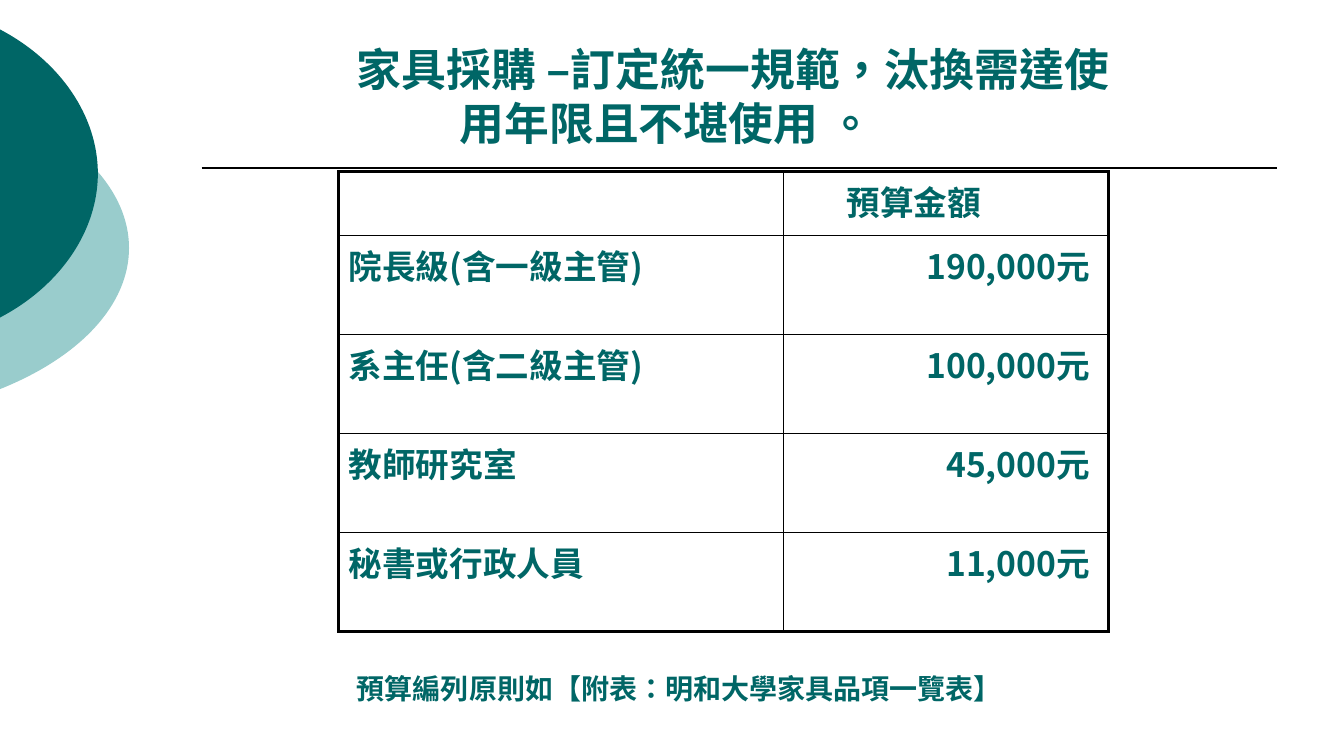
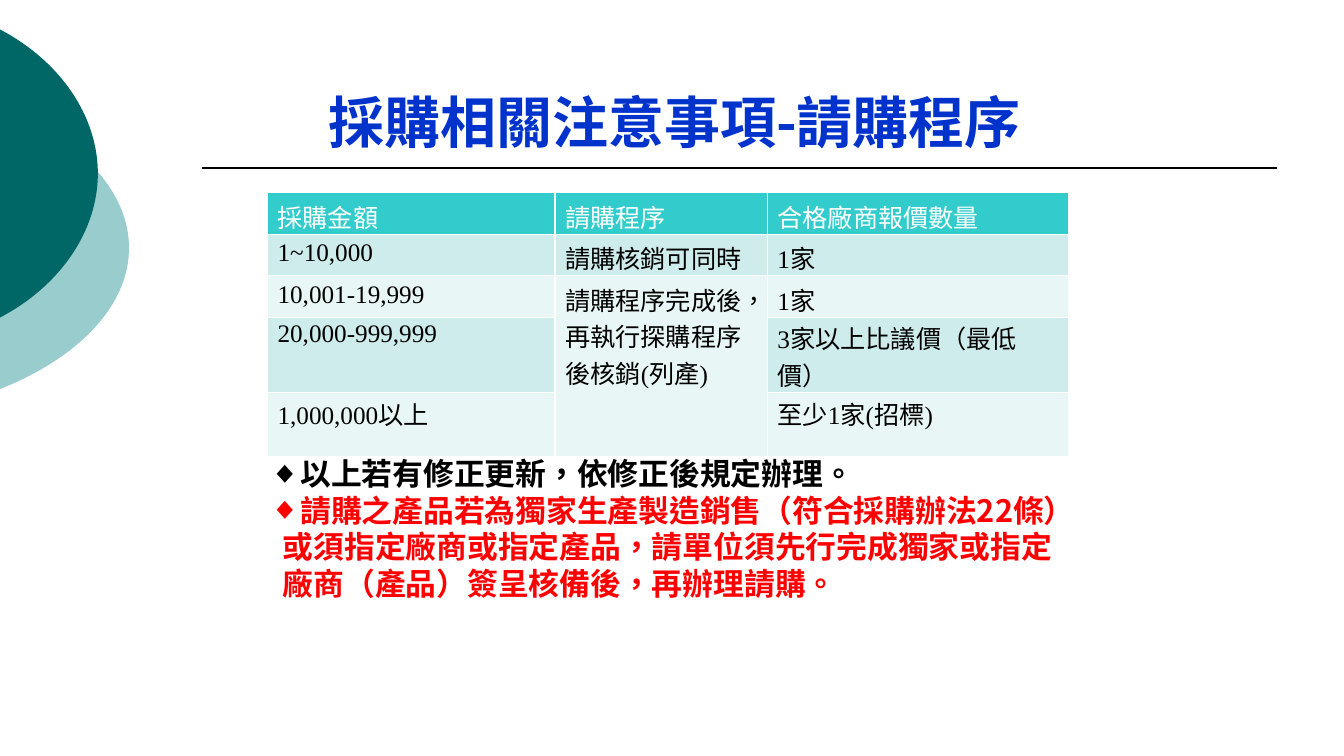
"""Build two slides on furniture budgets and the purchase request procedure."""
from dataclasses import dataclass

from lxml import etree
from pptx import Presentation
from pptx.dml.color import RGBColor
from pptx.enum.lang import MSO_LANGUAGE_ID
from pptx.enum.shapes import MSO_CONNECTOR
from pptx.enum.text import MSO_ANCHOR, MSO_AUTO_SIZE, PP_ALIGN
from pptx.oxml.ns import qn
from pptx.util import Inches, Pt

STRAIGHT = MSO_CONNECTOR.STRAIGHT
BOTTOM, TOP = MSO_ANCHOR.BOTTOM, MSO_ANCHOR.TOP
NO_FIT = MSO_AUTO_SIZE.NONE
LEFT, RIGHT = PP_ALIGN.LEFT, PP_ALIGN.RIGHT
CHINESE = MSO_LANGUAGE_ID.TAIWAN if hasattr(MSO_LANGUAGE_ID, "TAIWAN") else MSO_LANGUAGE_ID.TRADITIONAL_CHINESE


@dataclass(frozen=True)
class Theme:
    teal: str = "006666"
    mist: str = "99CCCC"
    blue: str = "0033CC"
    red: str = "FF0000"
    black: str = "000000"
    white: str = "FFFFFF"
    header: str = "33CCCC"
    bands: tuple = ("E8F6F6", "CEECEC")
    sans: str = "Noto Sans CJK JP"
    serif: str = "Times New Roman"
    dash: str = "Arial"
    heading: int = 40
    long_heading: int = 32
    budget: int = 24
    notice: int = 22
    footnote: int = 20
    procedure: int = 18


THEME = Theme()
WIDTH, HEIGHT = Inches(13.33), Inches(7.5)
COLUMN, ROW = WIDTH / 100, HEIGHT / 100


def write(para, text, size, color, bold=True, latin=THEME.sans):
    """Add one formatted run to a paragraph."""
    span = para.add_run()
    span.text = text
    span.font.size = Pt(size)
    span.font.bold = bold
    span.font.name = latin
    span.font.language_id = CHINESE
    span.font.color.rgb = RGBColor.from_string(color)
    east_asian = etree.SubElement(span.font._element, qn("a:ea"))
    east_asian.set("typeface", THEME.sans)


def add_grid(page, left, top, columns, rows, color, weight):
    """Add a plain table whose cell borders follow the weight rule."""
    frame = page.shapes.add_table(
        len(rows), len(columns), int(left * COLUMN), int(top * ROW),
        int(sum(columns) * COLUMN), int(sum(rows) * ROW))
    table = frame.table
    table.first_row = table.horz_banding = False
    for column, width in zip(table.columns, columns):
        column.width = int(width * COLUMN)
    for row, height in zip(table.rows, rows):
        row.height = int(height * ROW)
    for r in range(len(rows)):
        for c in range(len(columns)):
            cell = table.cell(r, c)
            cell.fill.background()
            properties = cell._tc.get_or_add_tcPr()
            for place, side in enumerate("LRTB"):
                line = etree.Element(qn(f"a:ln{side}"), w=str(Pt(weight(r, c, side))))
                fill = etree.SubElement(line, qn("a:solidFill"))
                etree.SubElement(fill, qn("a:srgbClr"), val=color)
                properties.insert(place, line)
    return table


deck = Presentation()
deck.slide_width, deck.slide_height = WIDTH, HEIGHT
layout = deck.slide_layouts[1]
budget_page = deck.slides.add_slide(layout)
request_page = deck.slides.add_slide(layout)

lobes = [
    (THEME.mist, (-35.4, 10, 45, 45.6), 9.6, 6, 32.8, 18.67, 14.4, 7.47),
    (THEME.teal, (-26.55, 0, 33.83, 46), 7.28, 4.55, 22.95, 19.05, 14.8, 7.5),
]
decorations = []
for color, (left, top, width, height), tip, bend, middle, half, upper, lower in lobes:
    builder = budget_page.shapes.build_freeform(0, 0)
    builder.add_line_segments([(int(width * COLUMN), int(height * ROW))])
    lobe = builder.convert_to_shape(int(left * COLUMN), int(top * ROW))
    outline = lobe.element.xpath(".//a:path")[0]
    for part in list(outline):
        outline.remove(part)
    strokes = [
        ("moveTo", [(0, -half)]),
        ("cubicBezTo", [(bend, -upper), (tip, -lower), (tip, 0)]),
        ("cubicBezTo", [(tip, lower), (bend, upper), (0, half)]),
        ("close", []),
    ]
    for kind, points in strokes:
        stroke = etree.SubElement(outline, qn(f"a:{kind}"))
        for x, y in points:
            etree.SubElement(stroke, qn("a:pt"), x=str(int((x - left) * COLUMN)),
                             y=str(int((middle + y - top) * ROW)))
    lobe.shadow.inherit = False
    lobe.fill.solid()
    lobe.fill.fore_color.rgb = RGBColor.from_string(color)
    lobe.line.fill.background()
    decorations.append(lobe)

rule_y = int(22.22 * ROW)
rule = budget_page.shapes.add_connector(
    STRAIGHT, int(15 * COLUMN), rule_y, int(95 * COLUMN), rule_y)
rule.line.width = Pt(1)
rule.line.color.rgb = RGBColor.from_string(THEME.black)
etree.SubElement(rule._element.spPr, qn("a:effectLst"))
decorations.append(rule)
for number, shape in enumerate(decorations):
    shape.element.xpath(".//p:cNvPr")[0].set("id", str(101 + number))
    layout.shapes.element.insert(2 + number, shape.element)

frames = [
    (budget_page.shapes.title, 25.8, 13.2, 59.6, 7.3, BOTTOM),
    (budget_page.placeholders[1], 25.8, 88.1, 55.5, 5.7, TOP),
    (request_page.shapes.title, 23.7, 4.4, 60, 16.7, BOTTOM),
    (request_page.placeholders[1], 19.3, 59.6, 63.2, 21, TOP),
]
for box, left, top, width, height, anchor in frames:
    box.left, box.top = int(left * COLUMN), int(top * ROW)
    box.width, box.height = int(width * COLUMN), int(height * ROW)
    box.text_frame.auto_size = NO_FIT
    box.text_frame.word_wrap = True
    box.text_frame.vertical_anchor = anchor

title_lines = [
    (0, [("家具採購 ", THEME.sans), ("–", THEME.dash), ("訂定統一規範，汰換需達使", THEME.sans)]),
    (7.65, [("用年限且不堪使用 。", THEME.sans)]),
]
title = budget_page.shapes.title.text_frame
for number, (indent, spans) in enumerate(title_lines):
    para = title.add_paragraph() if number else title.paragraphs[0]
    para.alignment = LEFT
    para.line_spacing = Pt(39)
    para._p.get_or_add_pPr().set("marL", str(int(indent * COLUMN)))
    for text, latin in spans:
        write(para, text, THEME.long_heading, THEME.teal, latin=latin)

para = request_page.shapes.title.text_frame.paragraphs[0]
para.alignment = LEFT
write(para, "採購相關注意事項-請購程序", THEME.heading, THEME.blue)

notes = [
    (budget_page, THEME.footnote, None, [
        ("預算編列原則如【附表：明和大學家具品項一覽表】", THEME.teal, 0, 0)]),
    (request_page, THEME.notice, Pt(26), [
        ("以上若有修正更新，依修正後規定辦理。", THEME.black, 2.3, -2.3),
        ("請購之產品若為獨家生產製造銷售（符合採購辦法22條）", THEME.red, 2.3, -2.3),
        ("或須指定廠商或指定產品，請單位須先行完成獨家或指定", THEME.red, 1, 0),
        ("廠商（產品）簽呈核備後，再辦理請購。", THEME.red, 1, 0)]),
]
for page, size, spacing, lines in notes:
    body = page.placeholders[1].text_frame
    for number, (text, color, margin, indent) in enumerate(lines):
        para = body.add_paragraph() if number else body.paragraphs[0]
        para.space_before = Pt(0)
        para.line_spacing = spacing
        properties = para._p.get_or_add_pPr()
        properties.set("marL", str(int(margin * COLUMN)))
        properties.set("indent", str(int(indent * COLUMN)))
        if indent:
            etree.SubElement(properties, qn("a:buFont"), typeface=THEME.dash)
            etree.SubElement(properties, qn("a:buChar"), char="◆")
        else:
            etree.SubElement(properties, qn("a:buNone"))
        write(para, text, size, color)

budgets = [
    ("", "預算金額"),
    ("院長級(含一級主管)", "190,000元"),
    ("系主任(含二級主管)", "100,000元"),
    ("教師研究室", "45,000元"),
    ("秘書或行政人員", "11,000元"),
]
outer_edges = {("L", 0), ("R", 1)}
outer_rows = {("T", 0), ("B", len(budgets) - 1)}
table = add_grid(
    budget_page, 25.2, 22.67, [33.1, 24.2], [8.5] + [13.1] * 4, THEME.black,
    lambda r, c, side: 2.25 if (side, c) in outer_edges or (side, r) in outer_rows else 1)
for r, texts in enumerate(budgets):
    for c, text in enumerate(texts):
        if not text:
            continue
        cell = table.cell(r, c)
        para = cell.text_frame.paragraphs[0]
        if c and r:
            para.alignment = RIGHT
            cell.margin_right = int(1.4 * COLUMN)
        elif c:
            cell.margin_left = int(4.7 * COLUMN)
        write(para, text, THEME.budget, THEME.teal)

procedures = [
    ("採購金額", "請購程序", "合格廠商報價數量"),
    ("1~10,000", "請購核銷可同時", "1家"),
    ("10,001-19,999", "請購程序完成後，再執行探購程序後核銷(列產)", "1家"),
    ("20,000-999,999", "", "3家以上比議價（最低價）"),
    ("1,000,000以上", "", "至少1家(招標)"),
]
table = add_grid(
    request_page, 19.9, 25.5, [21.4, 15.8, 22.4], [5.3, 5.5, 5.5, 9.9, 8.4], THEME.white,
    lambda r, c, side: 1)
table.cell(2, 1).merge(table.cell(4, 1))
for r, texts in enumerate(procedures):
    for c, text in enumerate(texts):
        cell = table.cell(r, c)
        cell.margin_bottom = 0
        if r > 2:
            cell.margin_top = int(0.3 * ROW)
        cell.fill.solid()
        shade = THEME.bands[r % 2] if r else THEME.header
        cell.fill.fore_color.rgb = RGBColor.from_string(shade)
        if text:
            write(cell.text_frame.paragraphs[0], text, THEME.procedure,
                  THEME.black if r else THEME.white, False,
                  THEME.serif if r else THEME.sans)

deck.save("out.pptx")
